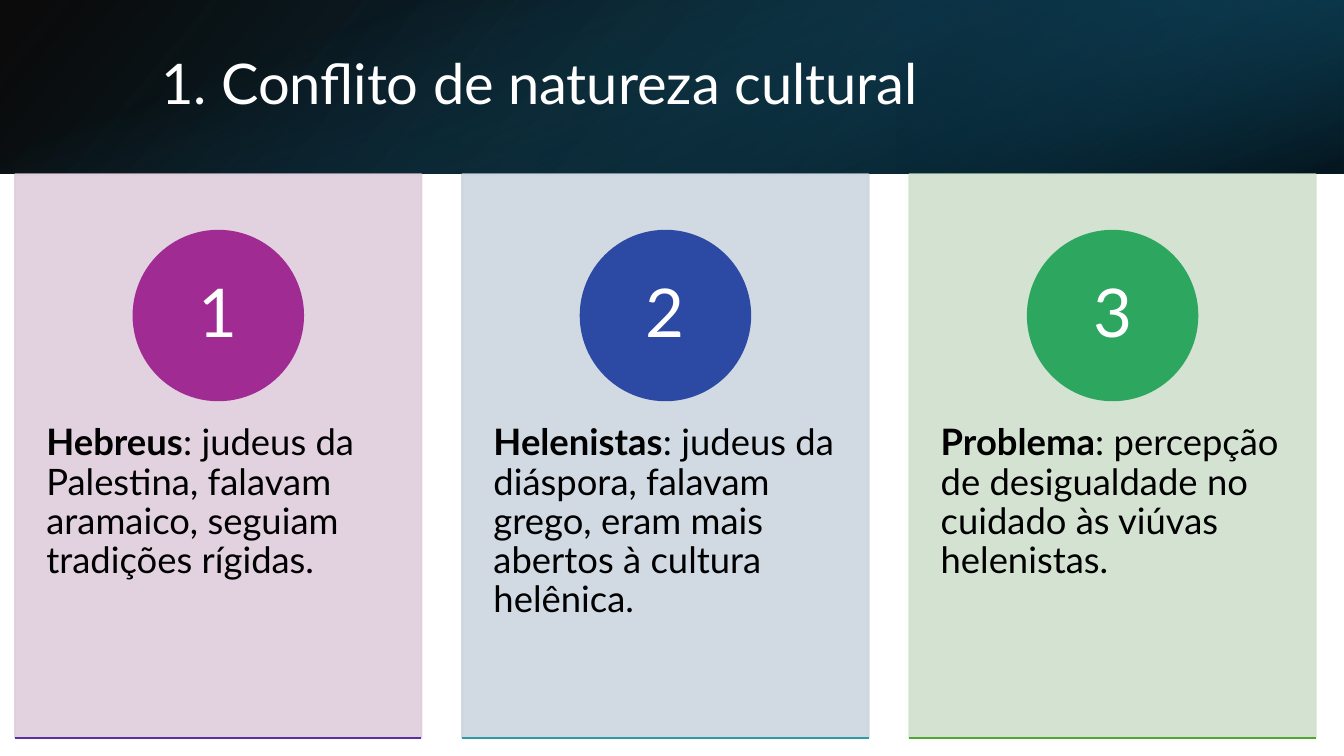
"""Build the slide on the cultural conflict between Hebrews and Hellenists."""
from lxml import etree
from pptx import Presentation
from pptx.dml.color import RGBColor
from pptx.enum.shapes import MSO_CONNECTOR, MSO_SHAPE
from pptx.enum.text import MSO_ANCHOR, PP_ALIGN
from pptx.oxml.ns import qn
from pptx.util import Inches, Pt

RECTANGLE, OVAL = MSO_SHAPE.RECTANGLE, MSO_SHAPE.OVAL
STRAIGHT = MSO_CONNECTOR.STRAIGHT
TOP, MIDDLE = MSO_ANCHOR.TOP, MSO_ANCHOR.MIDDLE
LEFT, CENTER = PP_ALIGN.LEFT, PP_ALIGN.CENTER

FONT = "Lato"
COLORS = {
    "white": "FFFFFF", "black": "000000",
    "navy": "104862", "deep": "0B3041", "teal": "156082",
}
TITLE = "1. Conflito de natureza cultural"
CARDS = [
    {"term": "Hebreus",
     "text": ": judeus da Palestina, falavam aramaico, seguiam tradições rígidas.",
     "panel": "DFCDDC", "circle": "A02B93", "rule": "5F2CA1"},
    {"term": "Helenistas",
     "text": ": judeus da diáspora, falavam grego, eram mais abertos à cultura helênica.",
     "panel": "CDD6E0", "circle": "2C49A3", "rule": "2D9AA4"},
    {"term": "Problema",
     "text": ": percepção de desigualdade no cuidado às viúvas helenistas.",
     "panel": "D0E1CD", "circle": "2DA65F", "rule": "4EA72E"},
]
SLIDE_WIDTH, SLIDE_HEIGHT, BAND_HEIGHT = 13.33, 7.5, 1.72
BANDS = [
    (0, 40, [(0, "black", 96), (100, "navy", 100)]),
    (8.89, 40, [(19, "deep", 68), (100, "teal", 79)]),
    (0, 70, [(23, "teal", 0), (99, "black", 74)]),
]
FIRST_LEFT, LAST_LEFT = 0.15, 9.02
CARD_TOP, CARD_WIDTH, CARD_HEIGHT = 1.73, 4.03, 5.59
CIRCLE_TOP, CIRCLE_SIZE = 2.29, 1.68
BODY_TOP, BODY_HEIGHT = 3.85, 3.35


def rgb(value):
    return RGBColor.from_string(value)


def add_alpha(color_element, percent):
    etree.SubElement(color_element, qn("a:alpha"), val=str(percent * 1000))


def add_box(page, kind, left, top, width, height):
    box = page.shapes.add_shape(
        kind, Inches(left), Inches(top), Inches(width), Inches(height))
    box.shadow.inherit = False
    return box


def add_band(page, left, angle, stops):
    band = add_box(page, RECTANGLE, left, 0, SLIDE_WIDTH - left, BAND_HEIGHT)
    band.line.fill.background()
    band.fill.gradient()
    band.fill.gradient_angle = 360 - angle
    stop_list = band._element.spPr.find(".//" + qn("a:gsLst"))
    for old_stop in list(stop_list):
        stop_list.remove(old_stop)
    for position, name, opacity in stops:
        stop = etree.SubElement(stop_list, qn("a:gs"), pos=str(position * 1000))
        color = etree.SubElement(stop, qn("a:srgbClr"), val=COLORS[name])
        add_alpha(color, opacity)


def paint(box, color, opacity=100):
    box.fill.solid()
    box.fill.fore_color.rgb = rgb(color)
    box.line.color.rgb = rgb(color)
    box.line.width = Pt(1.5)
    if opacity < 100:
        for element in box._element.spPr.iter(qn("a:srgbClr")):
            add_alpha(element, opacity)


def write(frame, parts, size, color, align, anchor, inset_x, inset_y):
    frame.word_wrap = True
    frame.vertical_anchor = anchor
    frame.margin_left = frame.margin_right = Inches(inset_x)
    frame.margin_top = frame.margin_bottom = Inches(inset_y)
    para = frame.paragraphs[0]
    para.alignment = align
    para.line_spacing = 0.9
    para.font.name = FONT
    para.font.size = Pt(size)
    para.font.color.rgb = rgb(COLORS[color])
    for text, bold in parts:
        span = para.add_run()
        span.text = text
        if bold:
            span.font.bold = True


def add_card(page, number, left, card):
    panel = add_box(page, RECTANGLE, left, CARD_TOP, CARD_WIDTH, CARD_HEIGHT)
    paint(panel, card["panel"], 90)

    body = page.shapes.add_textbox(
        Inches(left), Inches(BODY_TOP), Inches(CARD_WIDTH), Inches(BODY_HEIGHT))
    write(body.text_frame, [(card["term"], True), (card["text"], False)],
          26, "black", LEFT, TOP, 0.31, 0.36)

    circle_left = left + (CARD_WIDTH - CIRCLE_SIZE) / 2
    circle = add_box(page, OVAL, circle_left, CIRCLE_TOP, CIRCLE_SIZE, CIRCLE_SIZE)
    paint(circle, card["circle"])
    write(circle.text_frame, [(str(number), False)],
          48, "white", CENTER, MIDDLE, 0.13, 0.01)

    bottom = Inches(CARD_TOP + CARD_HEIGHT)
    rule = page.shapes.add_connector(
        STRAIGHT, Inches(left), bottom, Inches(left + CARD_WIDTH), bottom)
    rule.line.color.rgb = rgb(card["rule"])
    rule.line.width = Pt(1.5)
    etree.SubElement(rule._element.spPr, qn("a:effectLst"))


def main():
    deck = Presentation()
    deck.slide_width, deck.slide_height = Inches(SLIDE_WIDTH), Inches(SLIDE_HEIGHT)
    page = deck.slides.add_slide(deck.slide_layouts[5])
    for left, angle, stops in BANDS:
        add_band(page, left, angle, stops)

    title = page.shapes.title
    title.left, title.top = Inches(1.5), Inches(0.38)
    title.width, title.height = Inches(10.98), Inches(0.96)
    write(title.text_frame, [(TITLE, False)], 40, "white", LEFT, MIDDLE, 0.1, 0.05)
    page.shapes._spTree.append(title._element)

    pitch = (LAST_LEFT - FIRST_LEFT) / (len(CARDS) - 1)
    for index, card in enumerate(CARDS):
        add_card(page, index + 1, FIRST_LEFT + index * pitch, card)
    deck.save("out.pptx")


if __name__ == "__main__":
    main()
